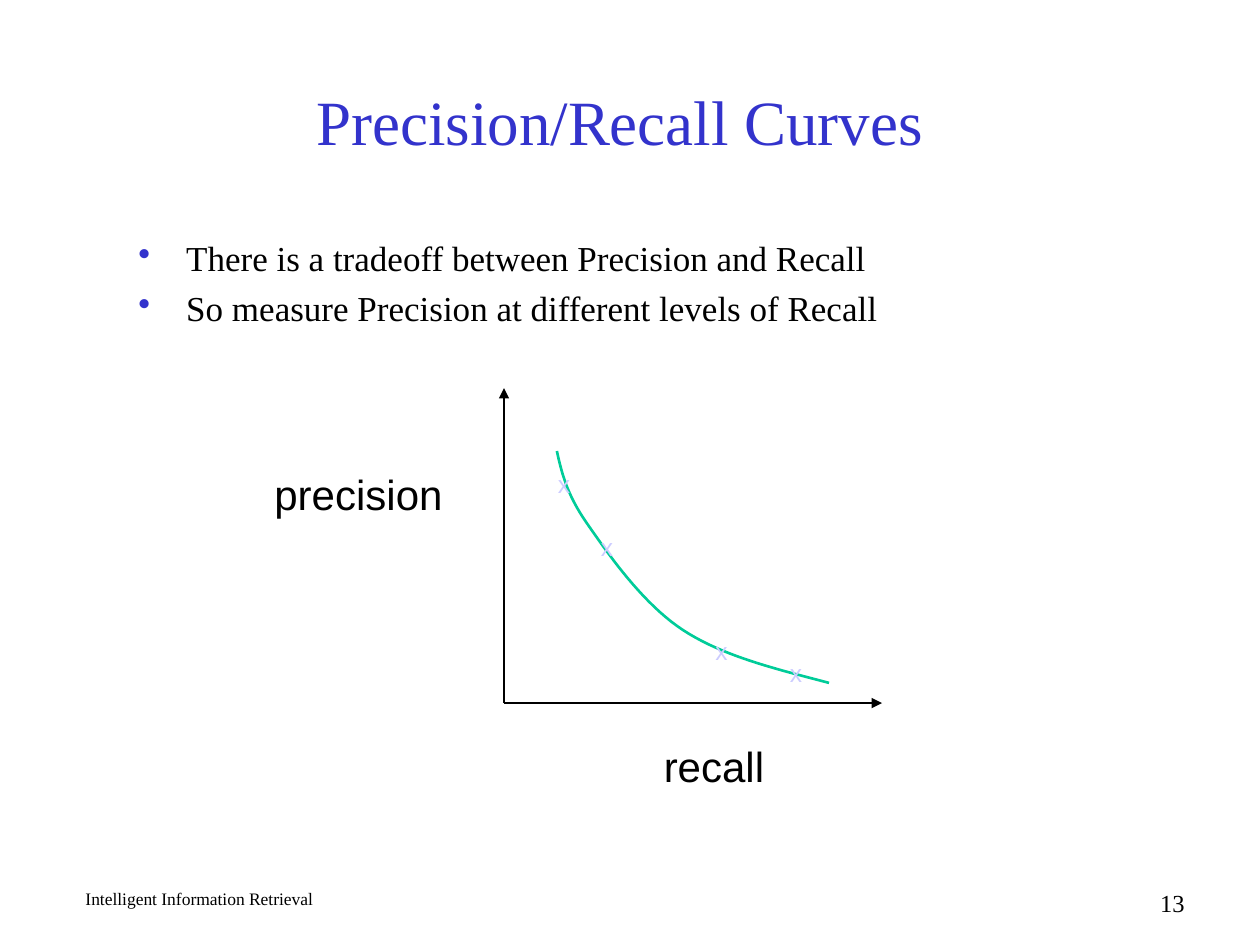
from lxml.etree import SubElement
from pptx import Presentation
from pptx.dml.color import RGBColor as RGB
from pptx.enum.shapes import MSO_CONNECTOR as Conn
from pptx.enum.text import MSO_ANCHOR as Anchor, MSO_AUTO_SIZE as Auto, PP_ALIGN as Align
from pptx.oxml.ns import qn
from pptx.util import Inches, Pt

SERIF, SANS = "Times New Roman", "Arial"
BLACK, BLUE, GREEN, PALE = "000000", "3333CC", "00CC99", "CCCCFF"


def hue(code):
    return RGB.from_string(code)


def add_run(para, text, size, face, code):
    run = para.add_run()
    run.text = text
    run.font.size = Pt(size)
    run.font.name = face
    run.font.color.rgb = hue(code)


def add_box(slide, box, wrap=True):
    frame = slide.shapes.add_textbox(*map(Inches, box)).text_frame
    frame.word_wrap = wrap
    frame.auto_size = Auto.NONE if wrap else Auto.SHAPE_TO_FIT_TEXT
    return frame


def add_label(slide, box, text, size, face=SANS, code=BLACK, wrap=False, align=Align.LEFT):
    para = add_box(slide, box, wrap).paragraphs[0]
    para.alignment = align
    add_run(para, text, size, face, code)


def add_title(slide, box, text):
    title = slide.shapes.title
    title.left, title.top, title.width, title.height = map(Inches, box)
    frame = title.text_frame
    frame.vertical_anchor = Anchor.MIDDLE
    para = frame.paragraphs[0]
    para.alignment = Align.CENTER
    add_run(para, text, 36, SERIF, BLUE)


def add_bullets(slide, box, lines):
    frame = add_box(slide, box)
    for i, text in enumerate(lines):
        para = frame.add_paragraph() if i else frame.paragraphs[0]
        para.space_before = Pt(4.6)
        props = para._p.get_or_add_pPr()
        props.set("marL", str(Inches(0.38)))
        props.set("indent", str(Inches(-0.38)))
        tint = SubElement(props, qn("a:buClr"))
        SubElement(tint, qn("a:srgbClr"), val=BLUE)
        SubElement(props, qn("a:buChar"), char="•")
        add_run(para, text, 20, SERIF, BLACK)


def add_axis(slide, start, end):
    points = map(Inches, (*start, *end))
    axis = slide.shapes.add_connector(Conn.STRAIGHT, *points)
    axis.line.width = Pt(1)
    axis.line.color.rgb = hue(BLACK)
    SubElement(axis.line._get_or_add_ln(), qn("a:tailEnd"), type="triangle")
    SubElement(axis._element.spPr, qn("a:effectLst"))


def bezier(a, b, c, d, t):
    u = 1 - t
    return tuple(
        Inches(u**3 * p + 3 * u * u * t * q + 3 * u * t * t * r + t**3 * s)
        for p, q, r, s in zip(a, b, c, d)
    )


def add_curve(slide, knots, steps=20):
    points = [
        bezier(*knots[i:i + 4], n / steps)
        for i in range(0, len(knots) - 1, 3)
        for n in range(1, steps + 1)
    ]
    path = slide.shapes.build_freeform(*map(Inches, knots[0]))
    path.add_line_segments(points, close=False)
    curve = path.convert_to_shape()
    curve.shadow.inherit = False
    curve.fill.background()
    curve.line.color.rgb = hue(GREEN)
    curve.line.width = Pt(1.5)


def add_plot(slide, box):
    x, y, w, h = box
    base = y + h
    add_axis(slide, (x, base), (x, y))
    add_axis(slide, (x, base), (x + w, base))
    knots = [
        (0.42, 0.5), (0.46, 0.68), (0.5, 0.85), (0.67, 1.09),
        (0.83, 1.32), (1.1, 1.71), (1.42, 1.92),
        (1.74, 2.13), (2.16, 2.23), (2.58, 2.34),
    ]
    add_curve(slide, [(x + dx, y + dy) for dx, dy in knots])
    add_label(slide, (x - 1.92, y + 0.59, 1.54, 0.5), "precision", 24)
    add_label(slide, (x + 1.17, base + 0.25, 1, 0.5), "recall", 24)
    for dx, dy in [(1.58, 1.92), (0.33, 0.59), (0.67, 1.09), (2.17, 2.09)]:
        add_label(slide, (x + dx, y + dy, 0.3, 0.33), "x", 14, code=PALE)


def add_footer(slide, box):
    x, y, w, h = box
    add_label(slide, (x, y, 3.75, h), "Intelligent Information Retrieval", 10, SERIF, wrap=True)
    add_label(slide, (x + w - 2.08, y, 2.08, h), "13", 14, SERIF, wrap=True, align=Align.RIGHT)


def main():
    deck = Presentation()
    deck.slide_width, deck.slide_height = Inches(10), Inches(7.5)
    slide = deck.slides.add_slide(deck.slide_layouts[5])
    add_footer(slide, (0.58, 7, 8.92, 0.25))
    add_title(slide, (0.67, 0.33, 8.5, 1.25), "Precision/Recall Curves")
    add_bullets(slide, (1, 1.83, 8.5, 1), [
        "There is a tradeoff between Precision and Recall",
        "So measure Precision at different levels of Recall",
    ])
    add_plot(slide, (4, 3.08, 3, 2.5))
    deck.save("out.pptx")


if __name__ == "__main__":
    main()
